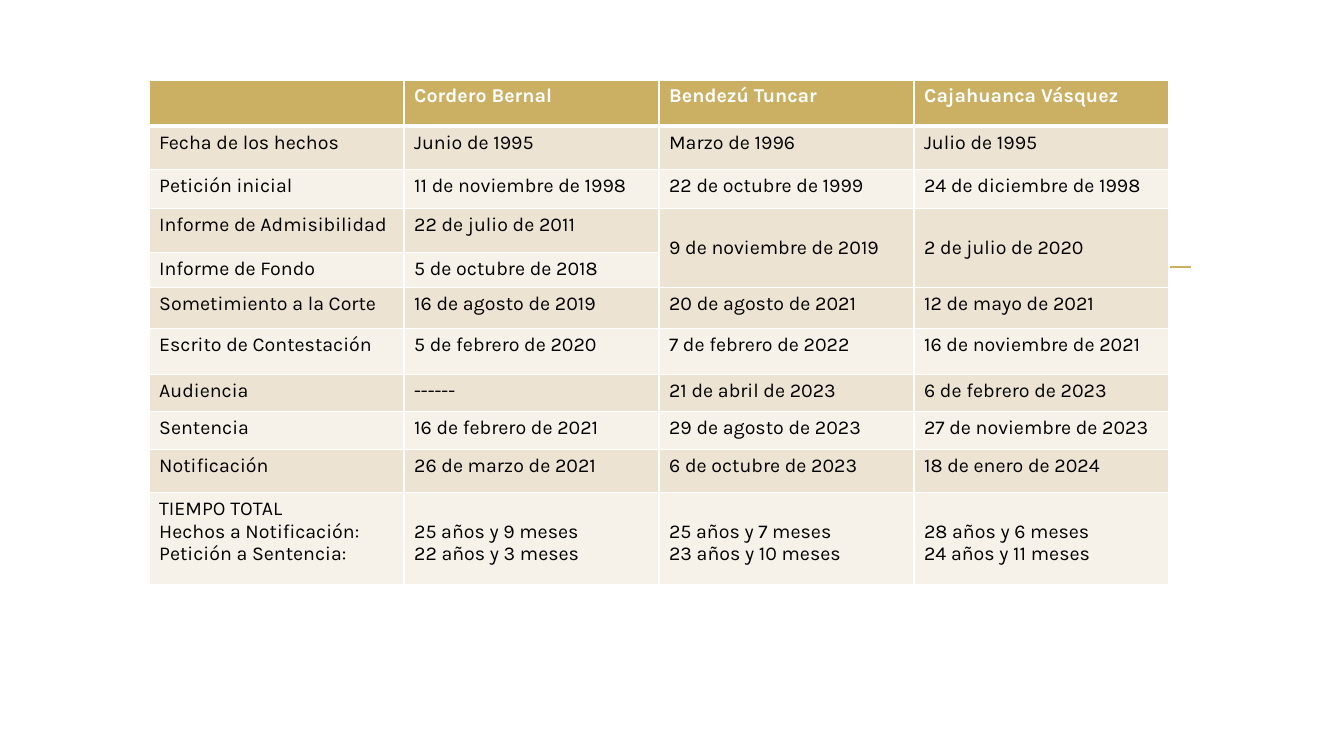
from lxml import etree
from pptx import Presentation
from pptx.dml.color import RGBColor
from pptx.enum.shapes import MSO_CONNECTOR
from pptx.enum.text import MSO_ANCHOR
from pptx.oxml.ns import qn
from pptx.util import Pt

STRAIGHT = MSO_CONNECTOR.STRAIGHT
TOP, MIDDLE = MSO_ANCHOR.TOP, MSO_ANCHOR.MIDDLE

FONT = "Karla"
COLORS = {
    "gold": "CBAF62",
    "sand": "ECE3D3",
    "cream": "F6F2EA",
    "white": "FFFFFF",
    "black": "000000",
}

TABLE_LEFT, TABLE_TOP, COLUMN_WIDTH = 106.5, 57.1, 182.15
ROW_HEIGHTS = [33, 30.7, 28, 31.4, 25, 29.3, 32.9, 26.4, 27.2, 30.7, 65.7]
ADMISSIBILITY_ROW = 3
TOTALS_MARGIN_TOP = 20  # leaves the first line to the row heading

# None continues the cell above
TIMELINE = [
    ["", "Cordero Bernal", "Bendezú Tuncar", "Cajahuanca Vásquez"],
    ["Fecha de los hechos", "Junio de 1995", "Marzo de 1996", "Julio de 1995"],
    ["Petición inicial", "11 de noviembre de 1998", "22 de octubre de 1999",
     "24 de diciembre de 1998"],
    ["Informe de Admisibilidad", "22 de julio de 2011",
     "9 de noviembre de 2019", "2 de julio de 2020"],
    ["Informe de Fondo", "5 de octubre de 2018", None, None],
    ["Sometimiento a la Corte", "16 de agosto de 2019",
     "20 de agosto de 2021", "12 de mayo de 2021"],
    ["Escrito de Contestación", "5 de febrero de 2020",
     "7 de febrero de 2022", "16 de noviembre de 2021"],
    ["Audiencia", "------", "21 de abril de 2023", "6 de febrero de 2023"],
    ["Sentencia", "16 de febrero de 2021", "29 de agosto de 2023",
     "27 de noviembre de 2023"],
    ["Notificación", "26 de marzo de 2021", "6 de octubre de 2023",
     "18 de enero de 2024"],
    ["TIEMPO TOTAL\nHechos a Notificación:\nPetición a Sentencia:",
     "25 años y 9 meses\n22 años y 3 meses",
     "25 años y 7 meses\n23 años y 10 meses",
     "28 años y 6 meses\n24 años y 11 meses"],
]


def rgb(color):
    return RGBColor.from_string(COLORS[color])


def write_text(frame, text, size=14, color="black", bold=False):
    """Write each line of the text as a paragraph."""
    frame.text = text
    for paragraph in frame.paragraphs:
        font = paragraph.font
        font.name, font.size, font.bold = FONT, Pt(size), bold
        font.color.rgb = rgb(color)
        for run in paragraph.runs:
            run.font.name, run.font.size, run.font.bold = FONT, Pt(size), bold
            run.font.color.rgb = rgb(color)


def set_borders(cell, color="white", **widths):
    """Draw borders; widths are in points, keyed L, R, T and B in that order."""
    properties = cell._tc.get_or_add_tcPr()
    for side, width in widths.items():
        border = etree.SubElement(properties, qn(f"a:ln{side}"), w=str(Pt(width)))
        fill = etree.SubElement(border, qn("a:solidFill"))
        etree.SubElement(fill, qn("a:srgbClr"), val=COLORS[color])


def add_rule(slide, left, right, y, color="gold", width=1.25):
    rule = slide.shapes.add_connector(STRAIGHT, Pt(left), Pt(y), Pt(right), Pt(y))
    rule.line.color.rgb = rgb(color)
    rule.line.width = Pt(width)
    etree.SubElement(rule._element.spPr, qn("a:effectLst"))


def style_cell(cell, row, column):
    header, totals = row == 0, row == len(TIMELINE) - 1
    set_borders(cell, L=1, R=1, T=3 if row == 1 else 1, B=3 if header else 1)
    cell.fill.solid()
    cell.fill.fore_color.rgb = rgb("gold" if header else "sand" if row % 2 else "cream")
    merged = row == ADMISSIBILITY_ROW and column > 1
    cell.vertical_anchor = MIDDLE if merged else TOP
    if totals and column > 0:
        cell.margin_top = Pt(TOTALS_MARGIN_TOP)


def add_timeline_table(slide):
    columns = len(TIMELINE[0])
    table = slide.shapes.add_table(
        len(TIMELINE), columns, Pt(TABLE_LEFT), Pt(TABLE_TOP),
        Pt(COLUMN_WIDTH * columns), Pt(sum(ROW_HEIGHTS))).table
    for column in table.columns:
        column.width = Pt(COLUMN_WIDTH)
    for row, (height, entries) in enumerate(zip(ROW_HEIGHTS, TIMELINE)):
        table.rows[row].height = Pt(height)
        for column, entry in enumerate(entries):
            cell = table.cell(row, column)
            style_cell(cell, row, column)
            if entry is None:
                table.cell(row - 1, column).merge(cell)
            else:
                write_text(cell.text_frame, entry, bold=row == 0,
                           color="white" if row == 0 else "black")


def main():
    deck = Presentation()
    deck.slide_width, deck.slide_height = Pt(960), Pt(540)
    slide = deck.slides.add_slide(deck.slide_layouts[6])
    add_rule(slide, left=110, right=850.5, y=190.8)
    add_timeline_table(slide)
    deck.save("out.pptx")


if __name__ == "__main__":
    main()
